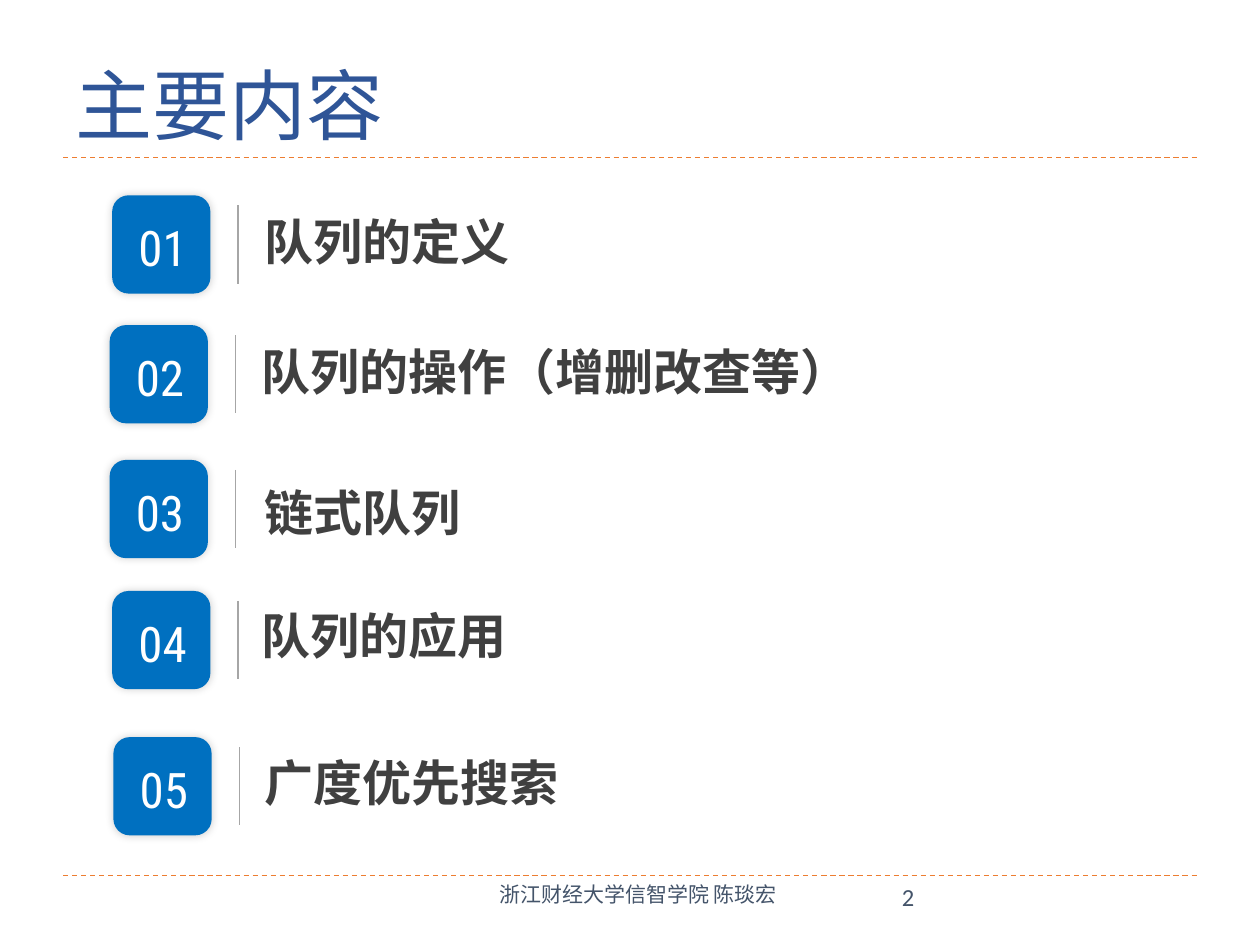
from dataclasses import dataclass

import pptx
import pptx.dml.color
import pptx.enum.dml
import pptx.enum.shapes
import pptx.enum.text
import pptx.oxml
import pptx.oxml.ns
import pptx.util

Inches = pptx.util.Inches
Pt = pptx.util.Pt
Align = pptx.enum.text.PP_ALIGN
Anchor = pptx.enum.text.MSO_ANCHOR
Fit = pptx.enum.text.MSO_AUTO_SIZE
NS = pptx.oxml.ns.nsdecls("a")
HAN = "Noto Sans CJK SC"
SIDE = 0.78


@dataclass
class Style:
    size: float
    font: str
    color: str
    bold: bool = False
    align: Align = Align.LEFT


@dataclass
class Item:
    text: str
    left: float
    top: float
    text_left: float
    text_top: float
    width: float = 3.11


TITLE = Style(44, "Calibri", "2F5597")
FOOTER = Style(12, "Calibri", "44546A", align=Align.CENTER)
PAGE = Style(14, "Calibri", "44546A")
NUMBER = Style(28, "Roboto Condensed", "FFFFFF", align=Align.CENTER)
LABEL = Style(28, HAN, "404040", bold=True)

ITEMS = [
    Item("队列的定义", 0.89, 1.55, 2, 1.63, 6.23),
    Item("队列的操作（增删改查等）", 0.87, 2.58, 1.98, 2.66, 5.93),
    Item("链式队列", 0.87, 3.65, 2, 3.78),
    Item("队列的应用", 0.89, 4.69, 1.98, 4.76),
    Item("广度优先搜索", 0.9, 5.85, 2, 5.92),
]


def paint(fmt, color: str) -> None:
    fmt.rgb = pptx.dml.color.RGBColor.from_string(color)


def write(frame, text: str, style: Style) -> None:
    frame.text = text
    frame.word_wrap = True
    para = frame.paragraphs[0]
    para.alignment = style.align
    for run in para.runs:
        run.font.size = Pt(style.size)
        run.font.bold = style.bold
        run.font.name = style.font
        paint(run.font.color, style.color)
        east = pptx.oxml.parse_xml(f'<a:ea {NS} typeface="{HAN}"/>')
        run.font._element.find(pptx.oxml.ns.qn("a:latin")).addnext(east)


def add_text(slide, text: str, left: float, top: float, width: float,
             height: float, style: Style, grow: bool = False) -> None:
    box = slide.shapes.add_textbox(
        Inches(left), Inches(top), Inches(width), Inches(height))
    write(box.text_frame, text, style)
    if grow:
        box.text_frame.auto_size = Fit.SHAPE_TO_FIT_TEXT


def add_line(slide, x1: float, y1: float, x2: float, y2: float,
             color: str, width: float, dash: bool = False) -> None:
    line = slide.shapes.add_connector(
        pptx.enum.shapes.MSO_CONNECTOR.STRAIGHT,
        Inches(x1), Inches(y1), Inches(x2), Inches(y2))
    paint(line.line.color, color)
    line.line.width = Pt(width)
    if dash:
        line.line.dash_style = pptx.enum.dml.MSO_LINE.DASH
    line._element.spPr.append(pptx.oxml.parse_xml(f"<a:effectLst {NS}/>"))


def add_tile(slide, left: float, top: float) -> None:
    tile = slide.shapes.add_shape(
        pptx.enum.shapes.MSO_SHAPE.ROUNDED_RECTANGLE,
        Inches(left), Inches(top), Inches(SIDE), Inches(SIDE))
    tile.fill.solid()
    paint(tile.fill.fore_color, "0070C0")
    tile.line.fill.background()
    tile._element.spPr.append(pptx.oxml.parse_xml(
        f'<a:effectLst {NS}><a:outerShdw blurRad="{Pt(5)}" dist="0" dir="0" '
        'algn="ctr" rotWithShape="0"><a:srgbClr val="000000">'
        '<a:alpha val="19000"/></a:srgbClr></a:outerShdw></a:effectLst>'))


def add_item(slide, index: int, item: Item) -> None:
    add_tile(slide, item.left, item.top)
    add_text(slide, f"{index:02d}", item.left + 0.01, item.top + 0.13,
             SIDE, 0.57, NUMBER, grow=True)
    rule = item.left + 1
    add_line(slide, rule, item.top + 0.08, rule, item.top + 0.7, "A6A6A6", 1)
    add_text(slide, item.text, item.text_left, item.text_top,
             item.width, 0.57, LABEL, grow=True)


def main() -> None:
    deck = pptx.Presentation()
    deck.slide_width, deck.slide_height = Inches(10), Inches(7.5)
    slide = deck.slides.add_slide(deck.slide_layouts[5])
    for y in (1.25, 6.95):
        add_line(slide, 0.5, y, 9.5, y, "ED7D31", 0.75, dash=True)

    title = slide.shapes.title
    title.left, title.top = Inches(0.5), Inches(0.17)
    title.width, title.height = Inches(9), Inches(1.08)
    write(title.text_frame, "主要内容", TITLE)
    title.text_frame.auto_size = Fit.NONE
    title.text_frame.vertical_anchor = Anchor.BOTTOM
    title.text_frame.paragraphs[0].line_spacing = 0.9

    for index, item in enumerate(ITEMS, 1):
        add_item(slide, index, item)
    add_text(slide, "浙江财经大学信智学院 陈琰宏 ", 3.17, 6.95, 3.83, 0.4, FOOTER)
    add_text(slide, "2", 7.06, 6.95, 2.25, 0.4, PAGE)
    deck.save("out.pptx")


if __name__ == "__main__":
    main()
